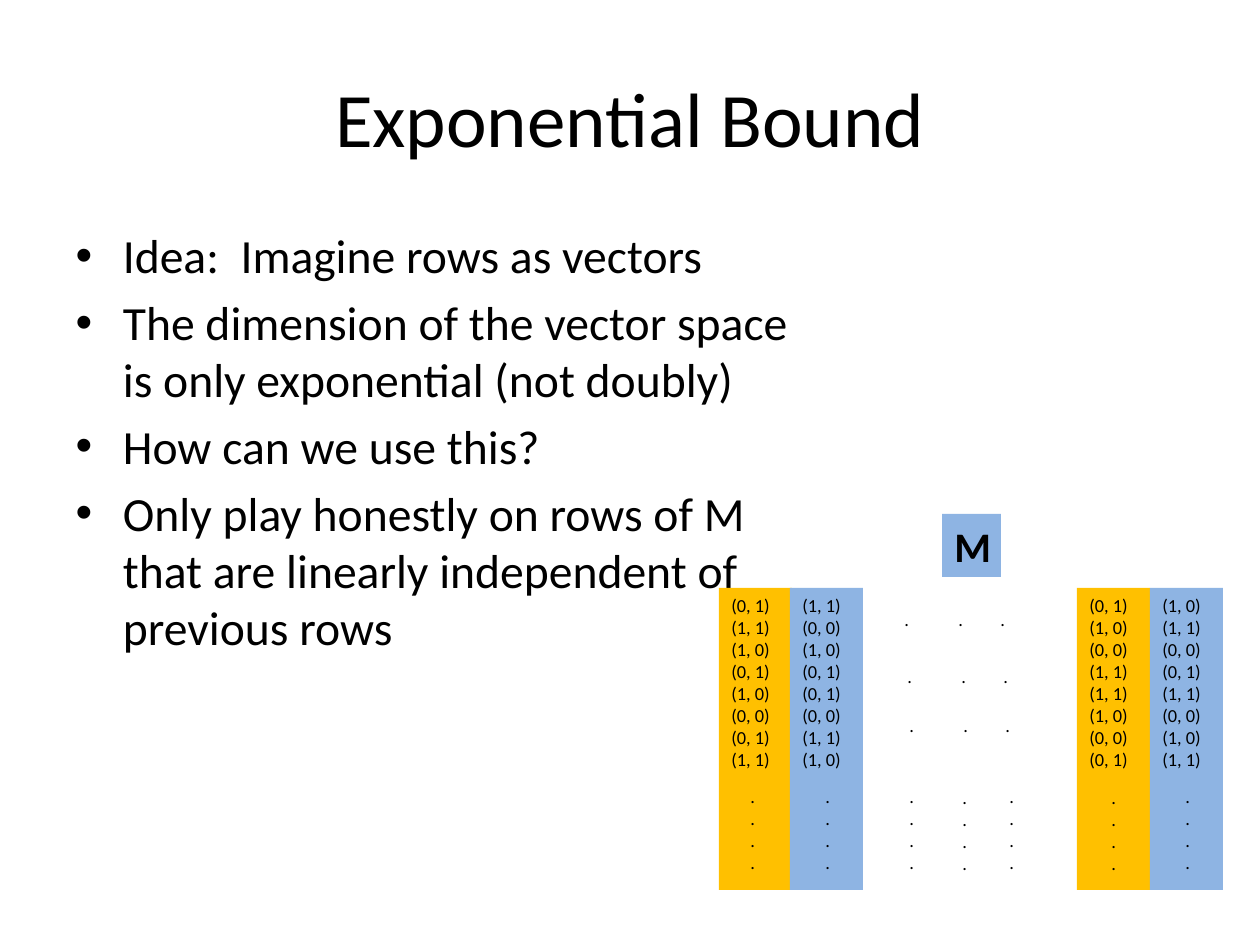
from lxml import etree
from pptx import Presentation
from pptx import util as u
from pptx.dml.color import RGBColor
from pptx.enum import shapes, text
from pptx.oxml.ns import qn

TITLE = "Exponential Bound"
BULLETS = [
    "Idea:  Imagine rows as vectors",
    "The dimension of the vector space is only exponential (not doubly)",
    "How can we use this?",
    "Only play honestly on rows of M that are linearly independent of previous rows",
]
COLUMNS = [
    (719, "gold", ["(0, 1)", "(1, 1)", "(1, 0)", "(0, 1)", "(1, 0)", "(0, 0)", "(0, 1)", "(1, 1)"]),
    (790, "blue", ["(1, 1)", "(0, 0)", "(1, 0)", "(0, 1)", "(0, 1)", "(0, 0)", "(1, 1)", "(1, 0)"]),
    (1077, "gold", ["(0, 1)", "(1, 0)", "(0, 0)", "(1, 1)", "(1, 1)", "(1, 0)", "(0, 0)", "(0, 1)"]),
    (1150, "blue", ["(1, 0)", "(1, 1)", "(0, 0)", "(0, 1)", "(1, 1)", "(0, 0)", "(1, 0)", "(1, 1)"]),
]
COLUMN_DOTS = [(738, 779), (813, 779), (897, 779), (950, 780), (997, 779), (1173, 779), (1099, 780)]
ROW_DOTS = [(892, 602), (895, 659), (897, 708)]
DOT_TABS = [54, 96]
COLORS = {"gold": "FFC000", "blue": "8EB4E3", "text": "000000"}
FONT = "Calibri"
SCALE = 914400 / 126


def px(n):
    return u.Emu(round(n * SCALE))


def write(sp, lines, size, align=None, bold=None, anchor=text.MSO_ANCHOR.TOP):
    tf = sp.text_frame
    tf.text = "\n".join(lines)
    tf.word_wrap = True
    tf.auto_size = text.MSO_AUTO_SIZE.NONE
    tf.vertical_anchor = anchor
    for p in tf.paragraphs:
        p.alignment = align
        for r in p.runs:
            r.font.name = FONT
            r.font.size = u.Pt(size)
            r.font.bold = bold
            r.font.color.rgb = RGBColor.from_string(COLORS["text"])


def place(sp, *box):
    sp.left, sp.top, sp.width, sp.height = map(px, box)


def add_block(parent, box, color, lines, size, align, bold=None):
    sp = parent.add_shape(shapes.MSO_SHAPE.RECTANGLE, *map(px, box))
    sp.shadow.inherit = False
    sp.fill.solid()
    sp.fill.fore_color.rgb = RGBColor.from_string(COLORS[color])
    sp.line.fill.background()
    write(sp, lines, size, align, bold)


def add_dots(parent, box, lines):
    sp = parent.add_textbox(*map(px, box))
    write(sp, lines, 10.5)
    return sp


def set_tabs(p, stops):
    tabs = etree.SubElement(p._p.get_or_add_pPr(), qn("a:tabLst"))
    for stop in stops:
        etree.SubElement(tabs, qn("a:tab"), pos=str(px(stop)), algn="l")


prs = Presentation()
prs.slide_width, prs.slide_height = px(1260), px(945)
s = prs.slides.add_slide(prs.slide_layouts[1])

title, body = s.placeholders
place(title, 63, 38, 1134, 157)
write(title, [TITLE], 44, text.PP_ALIGN.CENTER, anchor=text.MSO_ANCHOR.MIDDLE)
place(body, 63, 220, 766, 431)
write(body, BULLETS, 27.2)

matrix = s.shapes.add_group_shape().shapes
for x, color, pairs in COLUMNS:
    add_block(matrix, (x, 588, 73, 302), color, pairs, 10.5, text.PP_ALIGN.LEFT)
for x, y in COLUMN_DOTS:
    add_dots(matrix, (x, y, 30, 102), ["."] * 4)
for x, y in ROW_DOTS:
    sp = add_dots(matrix, (x, y, 140, 35), [".\t.\t."])
    set_tabs(sp.text_frame.paragraphs[0], DOT_TABS)
add_block(matrix, (942, 514, 59, 63), "blue", ["M"], 24, text.PP_ALIGN.CENTER, True)

prs.save("out.pptx")
